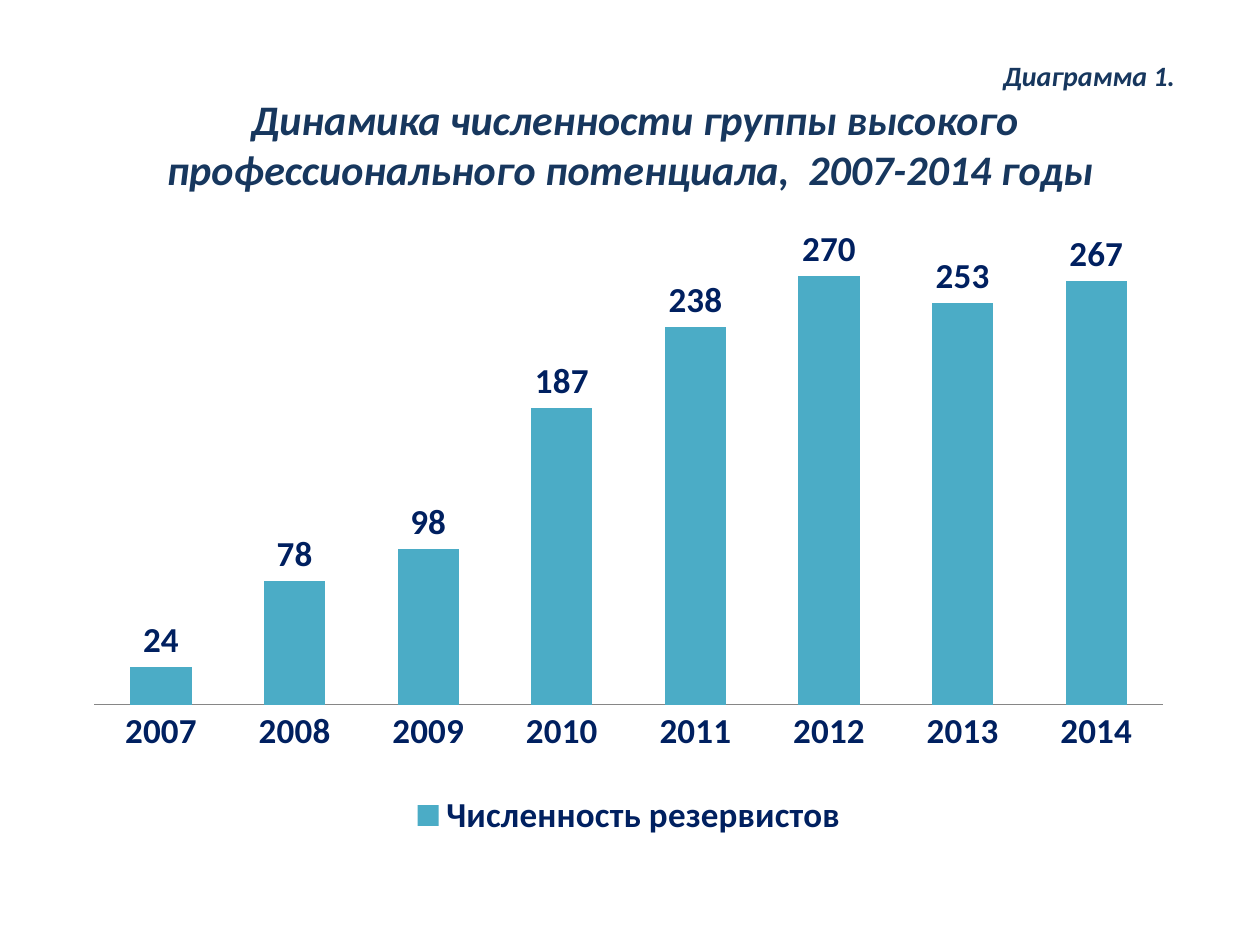
from lxml.etree import SubElement
from pptx import Presentation
from pptx.chart.data import CategoryChartData
from pptx.dml.color import RGBColor
from pptx.enum.chart import XL_CHART_TYPE, XL_LABEL_POSITION, XL_LEGEND_POSITION, XL_TICK_MARK
from pptx.enum.text import PP_ALIGN
from pptx.oxml.ns import qn
from pptx.util import Cm, Pt

NAVY = "002060"


def color(value):
    return RGBColor.from_string(value)


def style_font(font, size, value, italic=False):
    font.name = "Calibri"
    font.size = Pt(size)
    font.bold = True
    font.italic = italic
    font.color.rgb = color(value)


deck = Presentation()
deck.slide_width, deck.slide_height = Cm(25.4), Cm(19.05)
page = deck.slides.add_slide(deck.slide_layouts[6])

# Chart
data = CategoryChartData()
data.categories = [str(year) for year in range(2007, 2015)]
data.add_series("Численность резервистов", (24, 78, 98, 187, 238, 270, 253, 267))
chart = page.shapes.add_chart(
    XL_CHART_TYPE.COLUMN_CLUSTERED, Cm(1.52), Cm(2.06), Cm(22.33), Cm(14.96), data
).chart
chart.has_title = False
chart.font.name = "Calibri"
chart.font.size = Pt(10)

plot = chart.plots[0]
plot.gap_width = 118
plot.overlap = -25
plot.vary_by_categories = False
bars = plot.series[0].format.fill
bars.solid()
bars.fore_color.rgb = color("4BACC6")

plot.has_data_labels = True
labels = plot.data_labels
labels.show_value = True
labels.position = XL_LABEL_POSITION.OUTSIDE_END
style_font(labels.font, 20, NAVY)

years = chart.category_axis
years.major_tick_mark = XL_TICK_MARK.NONE
years.format.line.color.rgb = color("868686")
years.format.line.width = Pt(0.75)
style_font(years.tick_labels.font, 20, NAVY)

values = chart.value_axis
values.minimum_scale, values.maximum_scale = 0, 300
values.has_major_gridlines = False
values.visible = False

chart.has_legend = True
chart.legend.position = XL_LEGEND_POSITION.BOTTOM
chart.legend.include_in_layout = False
style_font(chart.legend.font, 20, NAVY)

# Fixed inner plot area, as fractions of the chart
plot_area = chart._chartSpace.chart.plotArea
for old_layout in plot_area.findall(qn("c:layout")):
    plot_area.remove(old_layout)
layout = SubElement(plot_area, qn("c:layout"))
plot_area.insert(0, layout)
manual = SubElement(layout, qn("c:manualLayout"))
for tag, value in (
    ("layoutTarget", "inner"), ("xMode", "edge"), ("yMode", "edge"),
    ("x", "0.017"), ("y", "0.17"), ("w", "0.965"), ("h", "0.642"),
):
    SubElement(manual, qn(f"c:{tag}")).set("val", value)

# Heading
box = page.shapes.add_textbox(Cm(1.5), Cm(0.91), Cm(22.6), Cm(3.68))
frame = box.text_frame
frame.word_wrap = True
heading = (
    (PP_ALIGN.RIGHT, (("Диаграмма 1.", 16), (" ", 20))),
    (PP_ALIGN.CENTER, (
        ("Динамика численности группы высокого профессионального потенциала,  2007-2014 годы ", 24),
    )),
)
for index, (alignment, spans) in enumerate(heading):
    para = frame.add_paragraph() if index else frame.paragraphs[0]
    para.alignment = alignment
    for text, size in spans:
        span = para.add_run()
        span.text = text
        style_font(span.font, size, "17375E", italic=True)

deck.save("out.pptx")
